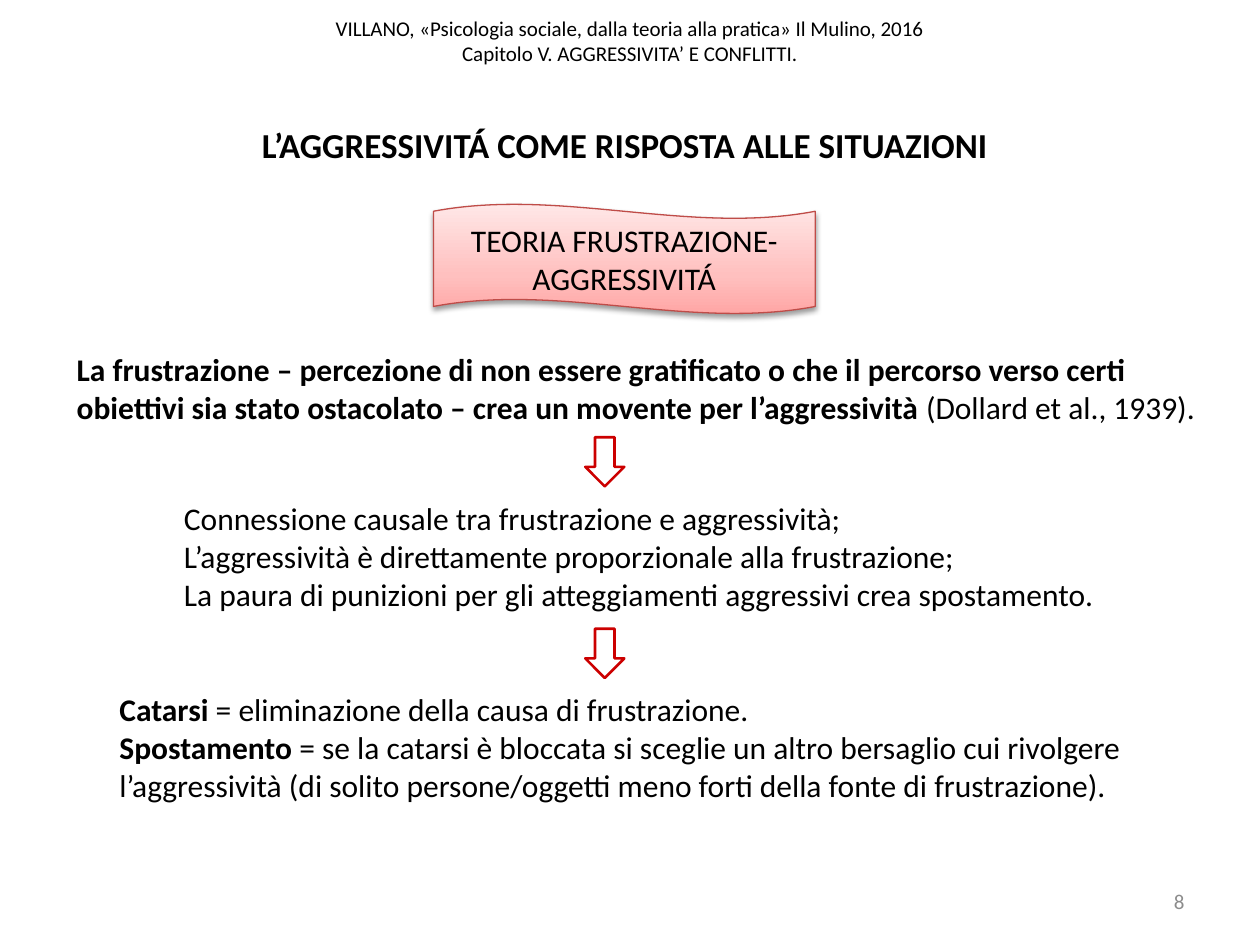
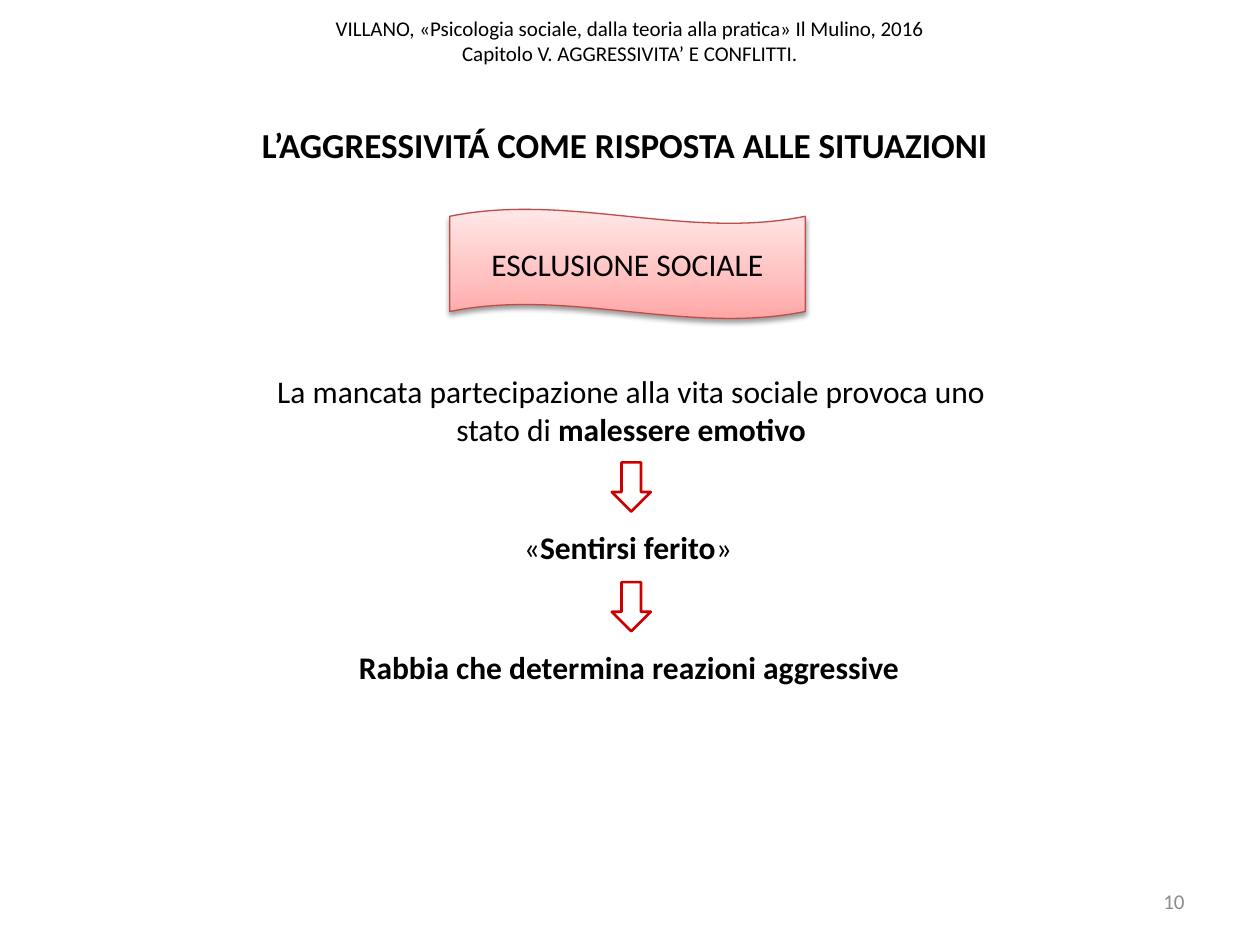
from dataclasses import dataclass

from lxml import etree
from pptx import Presentation
from pptx.dml.color import RGBColor
from pptx.enum.shapes import MSO_SHAPE
from pptx.enum.text import MSO_ANCHOR as ANCHOR, MSO_AUTO_SIZE, PP_ALIGN as ALIGN
from pptx.oxml import parse_xml
from pptx.oxml.ns import nsdecls, qn
from pptx.util import Inches, Pt


@dataclass(frozen=True)
class Theme:
    font: str = "Calibri"
    text: str = "000000"
    muted: str = "8C8C8C"
    arrow: str = "CC0000"
    wave_line: str = "BF4C48"
    wave_stops: tuple = ((0, "FFA6A5"), (35, "FFC0BF"), (100, "FFE7E7"))
    small: int = 12
    body: int = 18
    title: int = 20


THEME = Theme()

HEADER = [
    "VILLANO, «Psicologia sociale, dalla teoria alla pratica» Il Mulino, 2016",
    "Capitolo V. AGGRESSIVITA’ E CONFLITTI.",
]
TITLE = ["*L’AGGRESSIVITÁ COME RISPOSTA ALLE SITUAZIONI*"]
HEADER_BOX = (0, -0.11, 10, 0.87)
TITLE_BOX = (1.69, 0.93, 6.54, 0.44)
NUMBER_BOX = (7.17, 6.95, 2.33, 0.4)
ARROW_SIZE = (0.31, 0.39)

# Text between asterisks is bold.
SLIDES = [
    {
        "number": "8",
        "wave": ("TEORIA FRUSTRAZIONE-AGGRESSIVITÁ", (3.44, 1.62, 3.03, 0.87)),
        "body": ([
            "Connessione causale tra frustrazione e aggressività;",
            "L’aggressività è direttamente proporzionale alla frustrazione;",
            "La paura di punizioni per gli atteggiamenti aggressivi crea spostamento.",
        ], (1.36, 3.91, 7.6, 1.01), ALIGN.LEFT),
        "texts": [
            (["*La frustrazione – percezione di non essere gratificato o che il "
              "percorso verso certi obiettivi sia stato ostacolato – crea un "
              "movente per l’aggressività *(Dollard et al., 1939)."],
             (0.51, 2.73, 9.15, 0.71), ALIGN.LEFT),
            (["*Catarsi* = eliminazione della causa di frustrazione.",
              "*Spostamento* = se la catarsi è bloccata si sceglie un altro "
              "bersaglio cui rivolgere l’aggressività (di solito persone/oggetti "
              "meno forti della fonte di frustrazione)."],
             (0.85, 5.43, 8.47, 1.01), ALIGN.LEFT),
        ],
        "arrow_center": 4.8,
        "arrow_tops": (3.47, 4.99),
    },
    {
        "number": "10",
        "wave": ("ESCLUSIONE SOCIALE", (3.57, 1.66, 2.82, 0.87)),
        "body": (["La mancata partecipazione alla vita sociale provoca uno "
                  "stato di *malessere emotivo*"],
                 (1.91, 2.9, 6.2, 0.71), ALIGN.CENTER),
        "texts": [
            (["«*Sentirsi ferito*»"], (4.06, 4.14, 1.9, 0.4), ALIGN.LEFT),
            (["*Rabbia che determina reazioni aggressive*"],
             (2.75, 5.09, 4.7, 0.4), ALIGN.LEFT),
        ],
        "arrow_center": 5.01,
        "arrow_tops": (3.67, 4.62),
    },
]


def rgb(color):
    return RGBColor.from_string(color)


def write(sp, lines, align=ALIGN.LEFT, size=THEME.body, color=THEME.text,
          anchor=ANCHOR.TOP):
    tf = sp.text_frame
    tf.word_wrap = True
    tf.auto_size = MSO_AUTO_SIZE.NONE
    tf.vertical_anchor = anchor
    for i, line in enumerate(lines):
        p = tf.add_paragraph() if i else tf.paragraphs[0]
        p.alignment = align
        p.space_before = Pt(0)
        pPr = p._p.get_or_add_pPr()
        pPr.set("marL", "0")
        pPr.set("indent", "0")
        etree.SubElement(pPr, qn("a:buNone"))
        for j, part in enumerate(line.split("*")):
            if not part:
                continue
            r = p.add_run()
            r.text = part
            r.font.name = THEME.font
            r.font.size = Pt(size)
            r.font.bold = j % 2 == 1
            r.font.color.rgb = rgb(color)


def place(sp, box):
    sp.left, sp.top, sp.width, sp.height = map(Inches, box)
    return sp


def add_text(slide, lines, box, *args, **style):
    write(slide.shapes.add_textbox(*map(Inches, box)), lines, *args, **style)


def add_outlined(slide, kind, box, color, width):
    sp = slide.shapes.add_shape(kind, *map(Inches, box))
    sp.shadow.inherit = False
    sp.fill.background()
    sp.line.color.rgb = rgb(color)
    sp.line.width = Pt(width)
    return sp


def add_wave(slide, text, box):
    sp = add_outlined(slide, MSO_SHAPE.WAVE, box, THEME.wave_line, 0.75)
    sp.adjustments[0] = 0.066
    spPr = sp._element.spPr
    stops = "".join(f'<a:gs pos="{pos * 1000}"><a:srgbClr val="{color}"/></a:gs>'
                    for pos, color in THEME.wave_stops)
    spPr.replace(spPr.find(qn("a:noFill")), parse_xml(
        f'<a:gradFill {nsdecls("a")} rotWithShape="1"><a:gsLst>{stops}</a:gsLst>'
        '<a:lin ang="16200000" scaled="1"/></a:gradFill>'))
    spPr.find(qn("a:effectLst")).append(parse_xml(
        f'<a:outerShdw {nsdecls("a")} blurRad="{Pt(3.1)}" dist="{Pt(1.6)}" '
        'dir="5400000" rotWithShape="0"><a:srgbClr val="000000">'
        '<a:alpha val="38000"/></a:srgbClr></a:outerShdw>'))
    write(sp, [text], ALIGN.CENTER, anchor=ANCHOR.MIDDLE)


def build_slide(prs, content):
    slide = prs.slides.add_slide(prs.slide_layouts[1])
    title, body = slide.placeholders
    add_text(slide, HEADER, HEADER_BOX, ALIGN.CENTER, THEME.small,
             anchor=ANCHOR.MIDDLE)
    add_text(slide, [content["number"]], NUMBER_BOX, ALIGN.RIGHT, THEME.small,
             THEME.muted, ANCHOR.MIDDLE)
    write(place(title, TITLE_BOX), TITLE, ALIGN.CENTER, THEME.title)
    add_wave(slide, *content["wave"])
    lines, box, align = content["body"]
    write(place(body, box), lines, align)
    for text in content["texts"]:
        add_text(slide, *text)
    width, height = ARROW_SIZE
    left = content["arrow_center"] - width / 2
    for top in content["arrow_tops"]:
        add_outlined(slide, MSO_SHAPE.DOWN_ARROW, (left, top, width, height),
                     THEME.arrow, 1.5)


def main():
    prs = Presentation()
    prs.slide_width, prs.slide_height = Inches(10), Inches(7.5)
    for content in SLIDES:
        build_slide(prs, content)
    prs.save("out.pptx")


if __name__ == "__main__":
    main()
